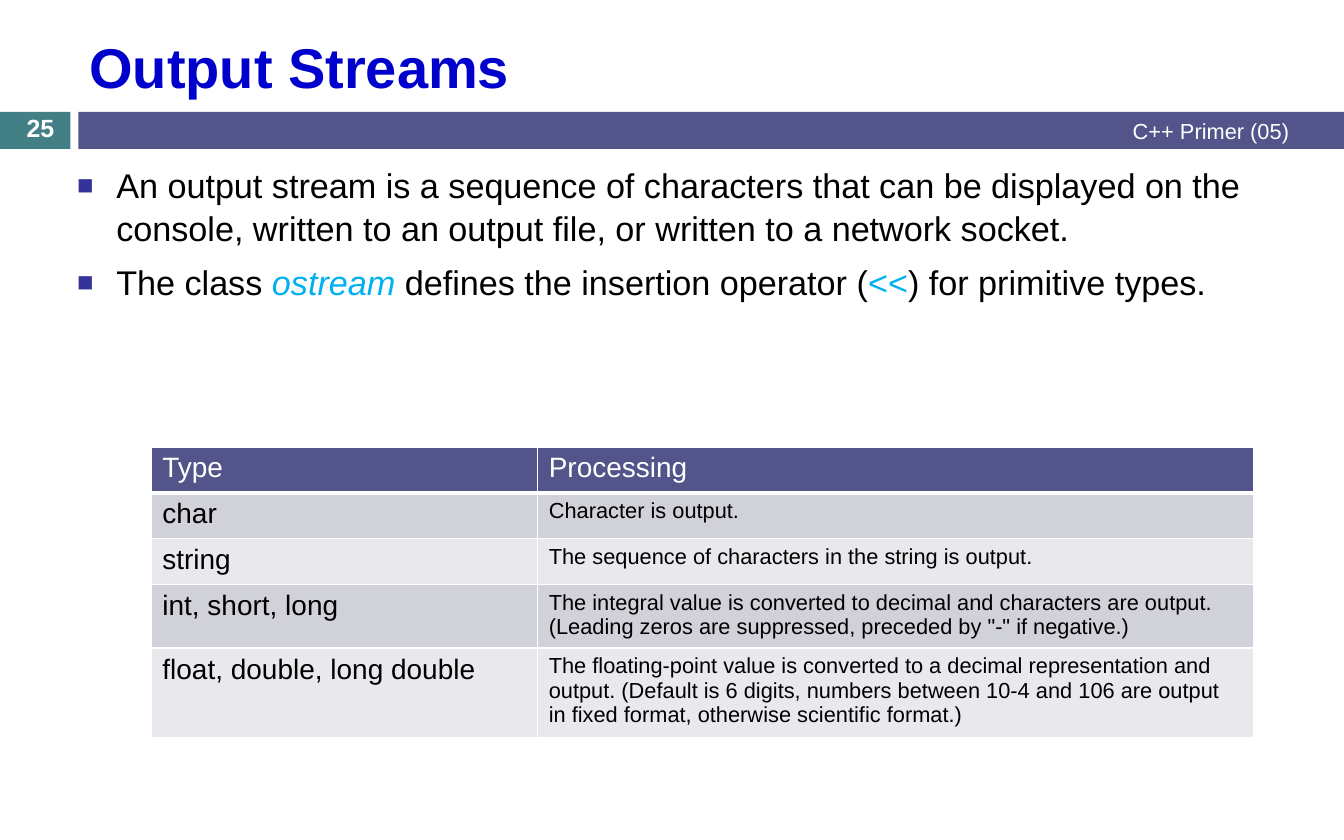
from dataclasses import dataclass

from lxml.etree import SubElement as Sub
from pptx import Presentation
from pptx.dml.color import RGBColor as RGB
from pptx.enum.shapes import MSO_SHAPE as Shape
from pptx.enum.text import MSO_ANCHOR as Anchor, PP_ALIGN as Align
from pptx.oxml.ns import qn
from pptx.util import Inches, Pt


@dataclass(frozen=True)
class Theme:
    font: str = "Arial"
    title: str = "0000CC"
    bar: str = "53548A"
    tab: str = "438086"
    mark: str = "333399"
    code: str = "00B0F0"
    ink: str = "000000"
    white: str = "FFFFFF"
    bands: tuple = ("D1D1DA", "E9E9ED")
    head_pt: int = 36
    body_pt: int = 22
    cell_pt: int = 18
    page_pt: int = 16
    note_pt: int = 14


T = Theme()

POINTS = [
    [("An output stream is a sequence of characters that can be displayed "
      "on the console, written to an output file, or written to a network "
      "socket.", {})],
    [("The class ", {}),
     ("ostream ", {"color": T.code, "italic": True}),
     ("defines the insertion operator (", {}),
     ("<<", {"color": T.code}),
     (") for primitive types.", {})],
]

ROWS = [
    ("Type", "Processing"),
    ("char", "Character is output."),
    ("string", "The sequence of characters in the string is output."),
    ("int, short, long",
     "The integral value is converted to decimal and characters are output. "
     "(Leading zeros are suppressed, preceded by \"-\" if negative.)"),
    ("float, double, long double",
     "The floating-point value is converted to a decimal representation and "
     "output. (Default is 6 digits, numbers between 10-4 and 106 are output "
     "in fixed format, otherwise scientific format.)"),
]


def add_run(para, text, size, color=T.ink, **style):
    run = para.add_run()
    run.text = text
    run.font.color.rgb = RGB.from_string(color)
    for name, value in {"name": T.font, "size": Pt(size), **style}.items():
        setattr(run.font, name, value)


def add_bar(slide, box, color):
    bar = slide.shapes.add_shape(Shape.RECTANGLE, *map(Inches, box))
    bar.shadow.inherit = False
    bar.fill.solid()
    bar.fill.fore_color.rgb = RGB.from_string(color)
    bar.line.fill.background()


def add_frame(slide, box, anchor=Anchor.MIDDLE):
    frame = slide.shapes.add_textbox(*map(Inches, box)).text_frame
    frame.word_wrap = True
    frame.vertical_anchor = anchor
    return frame


def add_label(slide, box, text, size, color, align=Align.LEFT, **style):
    para = add_frame(slide, box).paragraphs[0]
    para.alignment = align
    add_run(para, text, size, color, **style)


def set_bullet(para):
    """Give the paragraph a square mark and a hanging indent."""
    props = para._p.get_or_add_pPr()
    props.set("marL", str(Inches(0.35)))
    props.set("indent", str(-Inches(0.35)))
    Sub(Sub(props, qn("a:buClr")), qn("a:srgbClr"), val=T.mark)
    Sub(props, qn("a:buSzPct"), val="80000")
    Sub(props, qn("a:buFont"), typeface=T.font)
    Sub(props, qn("a:buChar"), char="■")


def add_points(slide, box, points):
    frame = add_frame(slide, box, Anchor.TOP)
    for i, parts in enumerate(points):
        para = frame.add_paragraph() if i else frame.paragraphs[0]
        para.space_before = Pt(7)
        para.line_spacing = 1.05
        set_bullet(para)
        for text, style in parts:
            add_run(para, text, T.body_pt, **style)


def set_edges(cell, widths):
    """Draw white borders; widths maps a side (L, R, T, B) to points."""
    props = cell._tc.get_or_add_tcPr()
    for i, (side, width) in enumerate(widths.items()):
        line = props.makeelement(qn(f"a:ln{side}"), {"w": str(Pt(width))})
        Sub(Sub(line, qn("a:solidFill")), qn("a:srgbClr"), val=T.white)
        props.insert(i, line)


def add_grid(slide, box, cols, high, rows):
    grid = slide.shapes.add_table(
        len(rows), len(cols), *map(Inches, box)).table
    for col, width in zip(grid.columns, cols):
        col.width = Inches(width)
    for r, texts in enumerate(rows):
        grid.rows[r].height = Inches(high)
        for c, text in enumerate(texts):
            cell = grid.cell(r, c)
            cell.fill.solid()
            cell.fill.fore_color.rgb = RGB.from_string(
                T.bands[(r - 1) % 2] if r else T.bar)
            set_edges(cell, {"L": 1, "R": 1, "T": 1 if r != 1 else 3,
                             "B": 1 if r else 3})
            add_run(cell.text_frame.paragraphs[0], text,
                    T.note_pt if r and c else T.cell_pt,
                    T.ink if r else T.white)


def main():
    deck = Presentation()
    deck.slide_width, deck.slide_height = Inches(12), Inches(7.5)
    slide = deck.slides.add_slide(deck.slide_layouts[6])
    add_bar(slide, (0, 1, 0.63, 0.33), T.tab)
    add_bar(slide, (0.7, 1, 11.3, 0.33), T.bar)
    add_label(slide, (0.7, 0.19, 10.91, 0.8), "Output Streams",
              T.head_pt, T.title, bold=True)
    add_points(slide, (0.59, 1.4, 10.91, 2.27), POINTS)
    add_label(slide, (4.5, 0.99, 7.11, 0.35), "C++ Primer (05)",
              T.note_pt, T.white, Align.RIGHT)
    add_label(slide, (0, 0.99, 0.72, 0.3), "25",
              T.page_pt, T.white, Align.CENTER, bold=True)
    add_grid(slide, (1.35, 3.99, 9.84, 2.05), (3.45, 6.39), 0.41, ROWS)
    deck.save("out.pptx")


if __name__ == "__main__":
    main()
